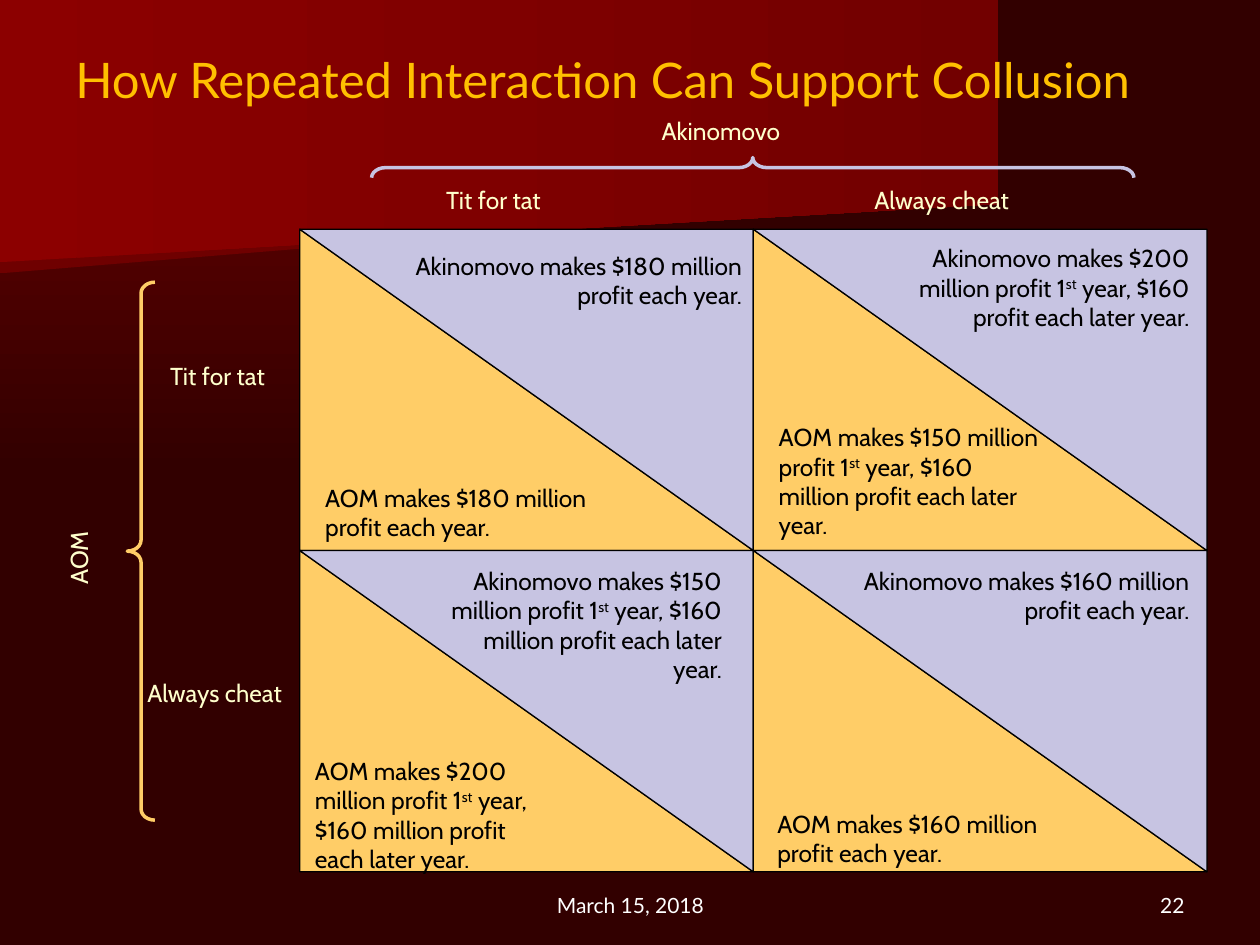
"""Build a payoff matrix slide about repeated interaction and collusion."""
from dataclasses import dataclass

from lxml import etree
from pptx import Presentation
from pptx import util as u
from pptx.dml.color import RGBColor
from pptx.enum import shapes, text
from pptx.oxml import ns


@dataclass(frozen=True)
class Theme:
    backdrop: tuple = ("720000", "320000")
    lower_band: tuple = ("6F0000", "720000")
    upper_band: tuple = ("8C0000", "720000")
    gold: str = "FFC000"
    cream: str = "FFFFCC"
    amber: str = "FFCD67"
    lilac: str = "C7C4E2"
    black: str = "000000"
    white: str = "FFFFFF"
    heading_font: str = "Lato"
    body_font: str = "Cabin"
    title_size: int = 28
    body_size: int = 14
    footer_size: int = 12


class Painter:
    def __init__(self, page, theme):
        self.page = page
        self.theme = theme

    def gradient(self, fill, colors):
        fill.gradient()
        for stop, color in zip(fill.gradient_stops, colors):
            stop.color.rgb = RGBColor.from_string(color)
        fill.gradient_angle = 0

    def backdrop(self):
        self.gradient(self.page.background.fill, self.theme.backdrop)
        gradient = self.page.element.find(".//" + ns.qn("a:gradFill"))
        gradient.remove(gradient.find(ns.qn("a:lin")))
        corner = etree.SubElement(gradient, ns.qn("a:path"), {"path": "rect"})
        etree.SubElement(corner, ns.qn("a:fillToRect"), l="0", t="0", r="100000", b="100000")

    def outline(self, points):
        corners = [(u.Pt(x), u.Pt(y)) for x, y in points]
        builder = self.page.shapes.build_freeform(*corners[0], scale=1.0)
        builder.add_line_segments(corners[1:], close=True)
        shape = builder.convert_to_shape()
        shape.shadow.inherit = False
        return shape

    def band(self, points, colors):
        shape = self.outline(points)
        self.gradient(shape.fill, colors)
        shape.line.fill.background()

    def triangle(self, points, color):
        shape = self.outline(points)
        shape.fill.solid()
        shape.fill.fore_color.rgb = RGBColor.from_string(color)
        shape.line.color.rgb = RGBColor.from_string(self.theme.black)
        shape.line.width = u.Pt(0.75)

    def cell(self, left, top, width, height):
        right, bottom = left + width, top + height
        diagonal = [(left, top), (right, bottom)]
        self.triangle(diagonal + [(left, bottom)], self.theme.amber)
        self.triangle(diagonal + [(right, top)], self.theme.lilac)

    def brace(self, left, top, width, height, color, curve, rotation=0):
        shape = self.page.shapes.add_shape(
            shapes.MSO_SHAPE.LEFT_BRACE, *map(u.Pt, (left, top, width, height)))
        shape.adjustments[0] = curve
        shape.rotation = rotation
        shape.shadow.inherit = False
        shape.fill.background()
        shape.line.color.rgb = RGBColor.from_string(color)
        shape.line.width = u.Pt(2)

    def words(self, content, area, font, size, color, align="LEFT", anchor="TOP",
              inset=(0, 0), wrap=True, rotation=0):
        box = self.page.shapes.add_textbox(*map(u.Pt, area))
        box.rotation = rotation
        frame = box.text_frame
        frame.word_wrap = wrap
        frame.margin_left = frame.margin_right = u.Pt(inset[0])
        frame.margin_top = frame.margin_bottom = u.Pt(inset[1])
        frame.vertical_anchor = text.MSO_ANCHOR[anchor]
        para = frame.paragraphs[0]
        para.alignment = text.PP_ALIGN[align]
        for index, piece in enumerate(content.split("^")):
            span = para.add_run()
            span.text = piece
            span.font.name = font
            span.font.size = u.Pt(size)
            span.font.color.rgb = RGBColor.from_string(color)
            if index % 2:
                span.font._element.set("baseline", "30000")

    def title(self, content, area):
        self.words(content, area, self.theme.heading_font, self.theme.title_size,
                   self.theme.gold, anchor="MIDDLE", inset=(7.2, 3.6))

    def footer(self, content, area, align):
        self.words(content, area, self.theme.heading_font, self.theme.footer_size,
                   self.theme.white, align, "BOTTOM", (7.2, 3.6))

    def label(self, content, left, top, width=93, **options):
        self.words(content, (left, top, width, 17), self.theme.body_font,
                   self.theme.body_size, self.theme.cream, **options)

    def payoff(self, content, left, top, width, align):
        self.words(content, (left, top, width, 34), self.theme.body_font,
                   self.theme.body_size, self.theme.black, align)


def main():
    deck = Presentation()
    deck.slide_width, deck.slide_height = u.Pt(720), u.Pt(540)
    theme = Theme()
    painter = Painter(deck.slides.add_slide(deck.slide_layouts[6]), theme)

    painter.backdrop()
    painter.band([(0, 72.7), (560.9, 72.7), (560.2, 110.2), (0, 156.2)], theme.lower_band)
    painter.band([(0, 0), (570.2, 0), (570.2, 116.6), (0, 149.8)], theme.upper_band)
    painter.title("How Repeated Interaction Can Support Collusion", (36, 21.6, 648, 47.5))

    cell_width, cell_height = 259.2, 183.6
    for row in range(2):
        for column in range(2):
            painter.cell(171.3 + column * cell_width, 131 + row * cell_height,
                         cell_width, cell_height)

    row_firm, column_firm = "AOM", "Akinomovo"
    painter.label(column_firm, 378, 66.2)
    painter.label(row_firm, 28.8, 310.3, 32, align="CENTER", wrap=False, rotation=270)
    for strategy, row_place, column_place in (
            ("Tit for tat", (97.2, 206.6), (254.9, 105.8)),
            ("Always cheat", (84.2, 387.4), (499.7, 105.8))):
        painter.label(strategy, *row_place)
        painter.label(strategy, *column_place)
    painter.brace(72.7, 161.3, 15.8, 307.4, theme.amber, 0.4)
    painter.brace(424.4, -122, 11.5, 435.6, theme.lilac, 0.7, rotation=90)

    steady = "{} makes ${} million profit each year."
    changing = "{} makes ${} million profit 1^st^ year, $160 {}profit each later year."
    for form, amount, unit, left, top, width in (
            (steady, 180, "", 215.3, 143.3, 208.8),
            (changing, 200, "", 517, 139, 162.7),
            (changing, 150, "million ", 249.8, 323.3, 162.7),
            (steady, 160, "", 470.9, 323.3, 208.8)):
        painter.payoff(form.format(column_firm, amount, unit), left, top, width, "RIGHT")
    for form, amount, left, top, width in (
            (steady, 180, 185.8, 275.8, 153.4),
            (changing, 150, 445, 241.2, 153.4),
            (changing, 200, 180, 432, 127.4),
            (steady, 160, 444.2, 462.2, 153.4)):
        painter.payoff(form.format(row_firm, amount, "million "), left, top, width, "LEFT")

    painter.footer("March 15, 2018", (246.2, 491.8, 228.2, 36), "CENTER")
    painter.footer("22", (516.2, 491.8, 167.8, 36), "RIGHT")
    deck.save("out.pptx")


if __name__ == "__main__":
    main()
